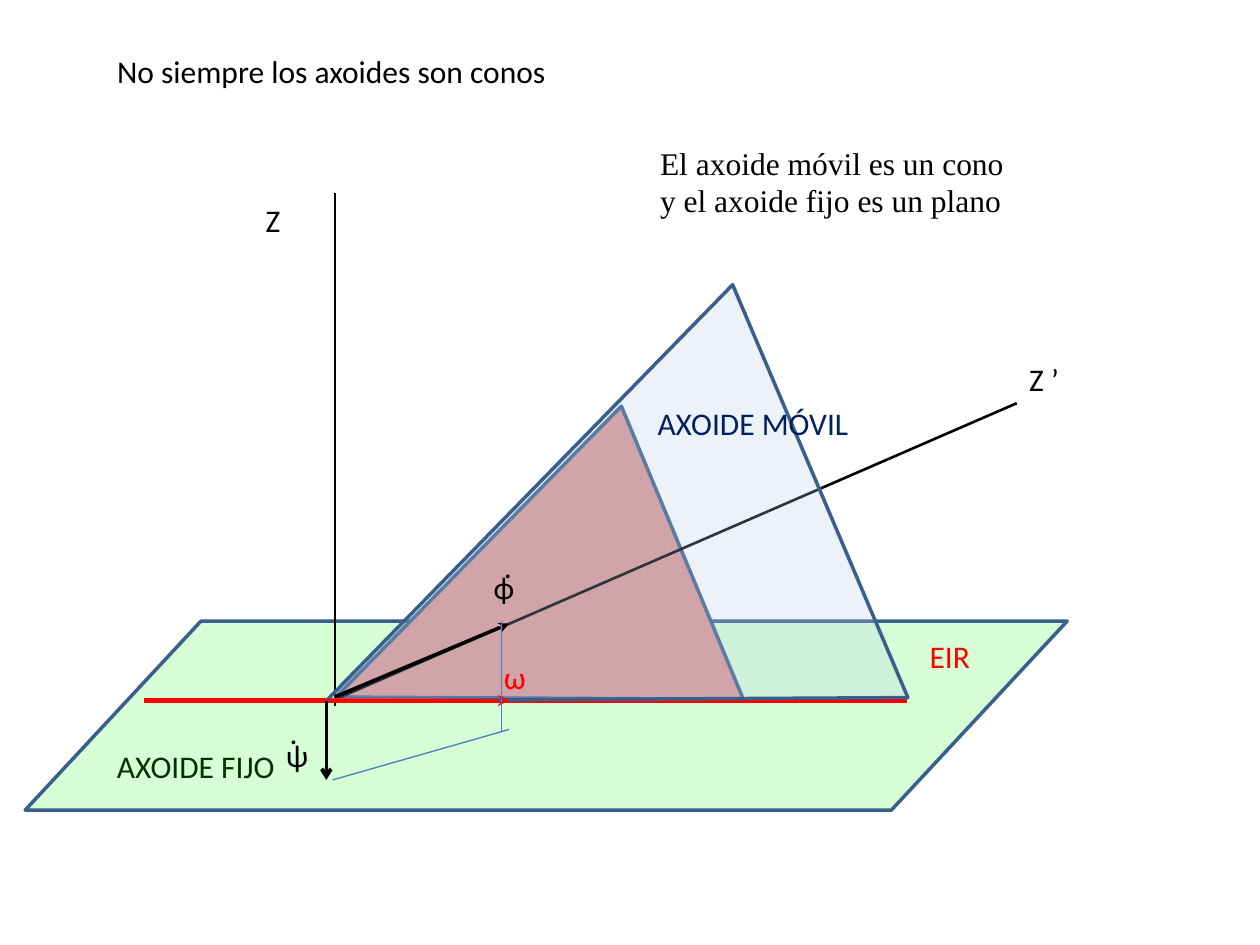
from pptx import Presentation, util as u
from pptx.dml.color import RGBColor
from pptx.enum import shapes, text
from pptx.oxml.ns import qn
from pptx.oxml.xmlchemy import OxmlElement

BLACK, RED, EDGE, THIN = "000000", "FF0000", "3A5F8C", "4B7EBC"

deck = Presentation()
deck.slide_width, deck.slide_height = u.Inches(10), u.Inches(7.5)
# Grid of 100 columns by 75 rows
col = deck.slide_width // 100
row = deck.slide_height // 75
slide = deck.slides.add_slide(deck.slide_layouts[5])
title = slide.shapes.title


def paint(fill, color):
    fill.solid()
    fill.fore_color.rgb = RGBColor.from_string(color)


def write(words, x, y, wide, tall=4, color=BLACK, face="Calibri", box=None):
    place = int(x * col), int(y * row), int(wide * col), int(tall * row)
    if box is None:
        box = slide.shapes.add_textbox(*place)
    box.left, box.top, box.width, box.height = place
    frame = box.text_frame
    frame.word_wrap = True
    frame.auto_size = text.MSO_AUTO_SIZE.NONE
    frame.vertical_anchor = text.MSO_ANCHOR.TOP
    frame.text = words
    par = frame.paragraphs[0]
    par.alignment = text.PP_ALIGN.LEFT
    par.font.size, par.font.name = u.Pt(18), face
    paint(par.font.fill, color)


# Plane, axes, cones and vectors, from back to front
plane = shapes.MSO_SHAPE.PARALLELOGRAM
cone = shapes.MSO_SHAPE.ISOSCELES_TRIANGLE
parts = [
    # preset, left, top, width, height, turn, fill, opacity in %
    (plane, 2, 49.3, 82.7, 15, 0, "99FF99", 40),
    (cone, 27.8, 34.7, 25.2, 29.8, 247.4, "D99694", 100),
    # line: start x, y, end x, y, colour, width, arrowhead
    ("line", 80.7, 32, 26.4, 55.6, BLACK, 1.5, None),
    ("line", 26.6, 15.3, 26.6, 56, BLACK, 1.5, None),
    ("line", 11.4, 55.6, 72, 55.6, RED, 2.75, None),
    (cone, 27.7, 26, 35.6, 42.6, 247, "B9CDE5", 26),
    ("line", 25.9, 55.6, 40.4, 55.6, RED, 2.25, "stealth"),
    ("line", 26.6, 55.3, 40.4, 49.5, BLACK, 2, "stealth"),
    ("line", 25.9, 55.6, 25.9, 61.9, BLACK, 2, "arrow"),
    ("line", 26.4, 61.9, 40.4, 57.9, THIN, 0.75, None),
    ("line", 39.8, 49.3, 39.8, 58, THIN, 0.75, None),
]
for kind, x, y, a, b, *look in parts:
    place = int(x * col), int(y * row), int(a * col), int(b * row)
    if kind == "line":
        color, width, head = look
        line = slide.shapes.add_connector(shapes.MSO_CONNECTOR.STRAIGHT, *place)
        paint(line.line.fill, color)
        line.line.width = u.Pt(width)
        if head:
            tip = OxmlElement("a:tailEnd")
            tip.set("type", head)
            line.line._get_or_add_ln().append(tip)
        line._element.spPr.append(OxmlElement("a:effectLst"))
    else:
        turn, color, solid = look
        form = slide.shapes.add_shape(kind, *place)
        form.shadow.inherit = False
        form.rotation = turn
        if kind == plane:
            form.adjustments[0] = 0.93
        paint(form.fill, color)
        if solid < 100:
            alpha = OxmlElement("a:alpha")
            alpha.set("val", str(solid * 1000))
            form._element.spPr.find(".//" + qn("a:srgbClr")).append(alpha)
        paint(form.line.fill, EDGE)
        form.line.width = u.Pt(2)

write("No siempre los axoides son conos", 8.3, 3.6, 38.6, box=title)
write("El axoide móvil es un cono y el axoide fijo es un plano",
      51.4, 10.9, 29.9, 7.1, face="Times New Roman")
write("AXOIDE FIJO", 8.3, 58.8, 16.5, color="003300")
write("AXOIDE MÓVIL", 51.2, 31.6, 19.5, color="002060")
write("EIR", 72.8, 50.1, 11, color=RED)
write("ω", 39, 51.7, 7.9, color=RED)
for sign, x, y, wide in [
    ("Z", 20.1, 15.5, 10.2), ("Z ’", 80.7, 28.1, 10.2),
    ("ϕ", 38.2, 44.6, 5.5), (".", 39, 42.9, 5.5),
    ("ψ", 21.7, 57.9, 9.4), (".", 22, 56.1, 5.5),
]:
    write(sign, x, y, wide)

deck.save("out.pptx")
